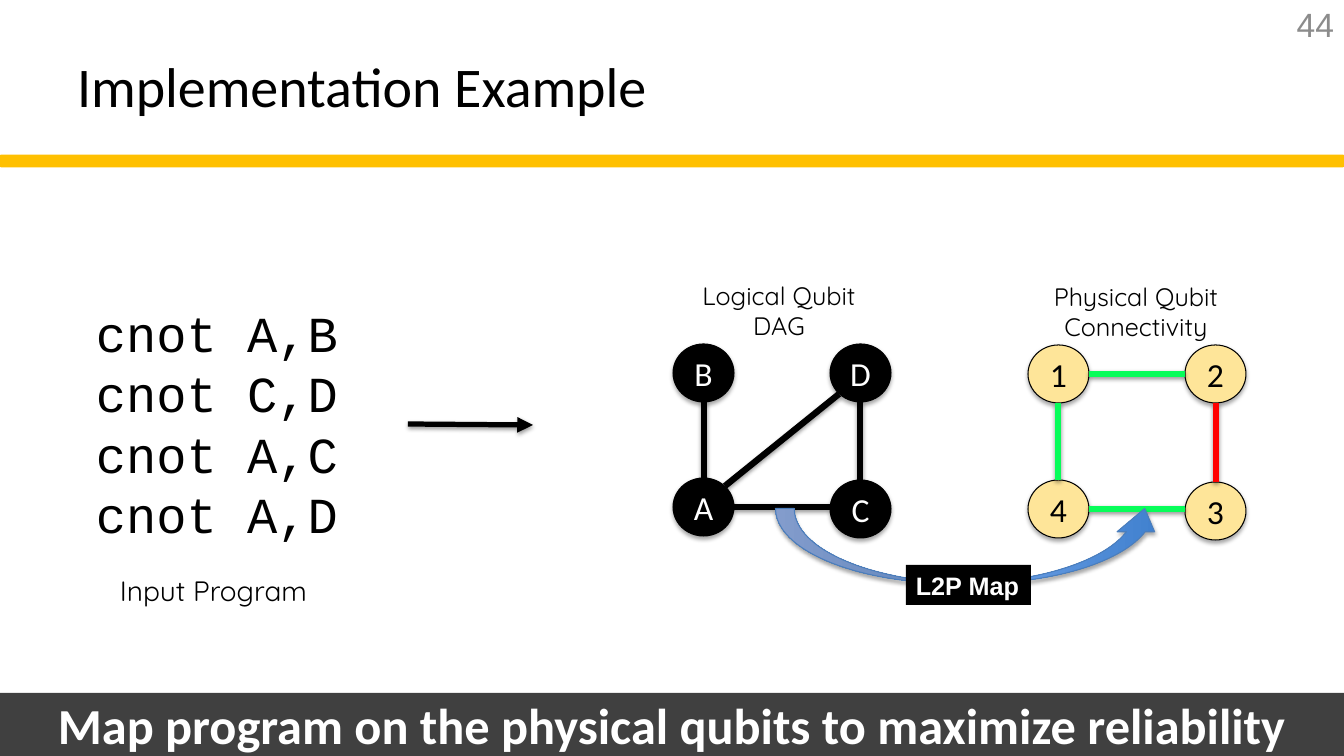
"""Build the slide that maps a logical qubit graph onto physical qubits."""
import pptx
import pptx.dml.color
import pptx.enum.shapes
import pptx.enum.text
import pptx.oxml
import pptx.oxml.ns
import pptx.util

RGB = pptx.dml.color.RGBColor
SHAPE = pptx.enum.shapes.MSO_SHAPE
ALIGN = pptx.enum.text.PP_ALIGN
ANCHOR = pptx.enum.text.MSO_ANCHOR
FIT = pptx.enum.text.MSO_AUTO_SIZE

BLACK = RGB(0x00, 0x00, 0x00)
WHITE = RGB(0xFF, 0xFF, 0xFF)
GRAY = RGB(0x8C, 0x8C, 0x8C)
CHARCOAL = RGB(0x40, 0x40, 0x40)
GOLD = RGB(0xFF, 0xC0, 0x00)
CREAM = RGB(0xFE, 0xE5, 0x99)
GREEN = RGB(0x07, 0xFD, 0x59)
RED = RGB(0xFF, 0x00, 0x00)
BLUE = RGB(0x3F, 0x80, 0xCE)
PALE_BLUE = RGB(0xA4, 0xC4, 0xFF)
BLUE_EDGE = RGB(0x4B, 0x7E, 0xBC)

NODE_WIDTH, NODE_HEIGHT = 61, 58
DIAGONAL = 0.71
RIGHT, LEFT, UP, DOWN = (1, 0), (-1, 0), (0, -1), (0, 1)
UP_RIGHT, DOWN_LEFT = (DIAGONAL, -DIAGONAL), (-DIAGONAL, DIAGONAL)


def px(length):
    """Turn slide pixels into EMU."""
    return pptx.util.Inches(length / 100.8)


class Painter:
    """Draw styled elements on the current slide."""

    def __init__(self, slide):
        self.slide = slide

    def fill_text(self, frame, text, font, size, color, align=ALIGN.LEFT,
                  anchor=ANCHOR.TOP, bold=False, wrap=True, fit=FIT.NONE):
        frame.text = text
        frame.word_wrap = wrap
        frame.auto_size = fit
        frame.vertical_anchor = anchor
        for para in frame.paragraphs:
            para.alignment = align
            para.font.name = font
            para.font.size = pptx.util.Pt(size)
            para.font.bold = bold
            para.font.color.rgb = color

    def title(self, box, text):
        holder = self.slide.shapes.title
        holder.left, holder.top, holder.width, holder.height = map(px, box)
        self.fill_text(holder.text_frame, text, "Calibri", 40, BLACK, anchor=ANCHOR.MIDDLE)

    def text(self, box, text, font, size, color=BLACK, **style):
        area = self.slide.shapes.add_textbox(*map(px, box))
        self.fill_text(area.text_frame, text, font, size, color, **style)

    def shape(self, kind, box, fill=None, line=None, line_width=0.75, shadow=False):
        shape = self.slide.shapes.add_shape(kind, *map(px, box))
        shape.shadow.inherit = False
        if fill is not None:
            shape.fill.solid()
            shape.fill.fore_color.rgb = fill
        if line is None:
            shape.line.fill.background()
        else:
            shape.line.color.rgb = line
            shape.line.width = pptx.util.Pt(line_width)
        if shadow:
            effects = shape._element.spPr.find(pptx.oxml.ns.qn("a:effectLst"))
            self.shadow(effects, 1.8, 35)
        return shape

    def shadow(self, effects, distance, opacity):
        effects.append(pptx.oxml.parse_xml(
            f'<a:outerShdw {pptx.oxml.ns.nsdecls("a")} blurRad="{pptx.util.Pt(3.1)}" '
            f'dist="{pptx.util.Pt(distance)}" dir="5400000" rotWithShape="0">'
            f'<a:srgbClr val="000000"><a:alpha val="{opacity * 1000}"/></a:srgbClr>'
            '</a:outerShdw>'))

    def line(self, start, end, color, width, arrow=False):
        line = self.slide.shapes.add_connector(
            pptx.enum.shapes.MSO_CONNECTOR.STRAIGHT, *map(px, start + end))
        line.line.color.rgb = color
        line.line.width = pptx.util.Pt(width)
        declaration = pptx.oxml.ns.nsdecls("a")
        properties = line._element.spPr
        if arrow:
            properties.find(pptx.oxml.ns.qn("a:ln")).append(
                pptx.oxml.parse_xml(f'<a:tailEnd {declaration} type="triangle"/>'))
        effects = pptx.oxml.parse_xml(f"<a:effectLst {declaration}/>")
        properties.append(effects)
        self.shadow(effects, 1.6, 38)

    def graph(self, nodes, edges, fill, color):
        for name, (left, top) in nodes.items():
            node = self.shape(SHAPE.OVAL, (left, top, NODE_WIDTH, NODE_HEIGHT),
                              fill, BLACK, shadow=True)
            self.fill_text(node.text_frame, name, "Calibri", 24, color,
                           ALIGN.CENTER, ANCHOR.MIDDLE)
        for first, leave, second, enter, edge_color in edges:
            start, end = rim(nodes[first], leave), rim(nodes[second], enter)
            if leave == RIGHT:
                end = end[0], start[1]
            self.line(start, end, edge_color, 4.5)


def rim(node, direction):
    """Return the point where a direction from a node's centre meets its outline."""
    return (round(node[0] + NODE_WIDTH * (1 + direction[0]) / 2),
            round(node[1] + NODE_HEIGHT * (1 + direction[1]) / 2))


def main():
    """Build and save the deck."""
    deck = pptx.Presentation()
    deck.slide_width, deck.slide_height = px(1344), px(756)
    page = Painter(deck.slides.add_slide(deck.slide_layouts[5]))

    page.shape(SHAPE.ROUNDED_RECTANGLE, (0, 156, 1344, 10), GOLD, GOLD, 2)
    page.title((67, 22, 896, 126), "Implementation Example")
    page.text((1273, 0, 71, 48), "44", "Arial", 24, GRAY,
              align=ALIGN.RIGHT, anchor=ANCHOR.MIDDLE)

    page.text((86, 297, 265, 254), "cnot A,B\ncnot C,D\ncnot A,C\ncnot A,D",
              "Courier New", 36, wrap=False, fit=FIT.SHAPE_TO_FIT_TEXT)
    page.text((110, 569, 217, 44), "Input Program", "Quicksand", 20,
              wrap=False, fit=FIT.SHAPE_TO_FIT_TEXT)
    page.line((408, 424), (533, 425), BLACK, 3.75, arrow=True)

    page.graph(
        {"B": (673, 344), "D": (830, 344), "C": (830, 480), "A": (673, 478)},
        [("A", UP_RIGHT, "D", DOWN_LEFT, BLACK), ("B", DOWN, "A", UP, BLACK),
         ("D", DOWN, "C", UP, BLACK), ("A", RIGHT, "C", LEFT, BLACK)],
        BLACK, WHITE)
    page.graph(
        {"1": (1028, 345), "2": (1185, 345), "3": (1185, 482), "4": (1028, 480)},
        [("1", RIGHT, "2", LEFT, GREEN), ("1", DOWN, "4", UP, GREEN),
         ("2", DOWN, "3", UP, RED), ("4", RIGHT, "3", LEFT, GREEN)],
        CREAM, BLACK)
    for left, top, caption in ((672, 275, "Logical Qubit DAG"),
                               (1029, 276, "Physical Qubit Connectivity")):
        page.text((left, top, 214, 72), caption, "Quicksand", 18,
                  align=ALIGN.CENTER, fit=FIT.SHAPE_TO_FIT_TEXT)

    banner = page.shape(SHAPE.ROUNDED_RECTANGLE, (0, 693, 1344, 63), CHARCOAL)
    banner.adjustments[0] = 0
    page.fill_text(banner.text_frame,
                   "Map program on the physical qubits to maximize reliability",
                   "Calibri", 36, WHITE, ALIGN.CENTER, ANCHOR.MIDDLE, bold=True)

    map_arrow = page.shape(SHAPE.CURVED_RIGHT_ARROW, (932, 352, 75, 388),
                           line=BLUE_EDGE, shadow=True)
    map_arrow.rotation = 270
    for index, value in enumerate((0.25, 0.5, 0.31)):
        map_arrow.adjustments[index] = value
    map_arrow.fill.gradient()
    map_arrow.fill.gradient_angle = 90
    for stop, color in zip(map_arrow.fill.gradient_stops, (BLUE, PALE_BLUE)):
        stop.color.rgb = color

    map_label = page.shape(SHAPE.RECTANGLE, (906, 565, 125, 40), BLACK)
    page.fill_text(map_label.text_frame, "L2P Map", "Arial", 18, WHITE,
                   bold=True, wrap=False, fit=FIT.SHAPE_TO_FIT_TEXT)

    deck.save("out.pptx")


if __name__ == "__main__":
    main()
